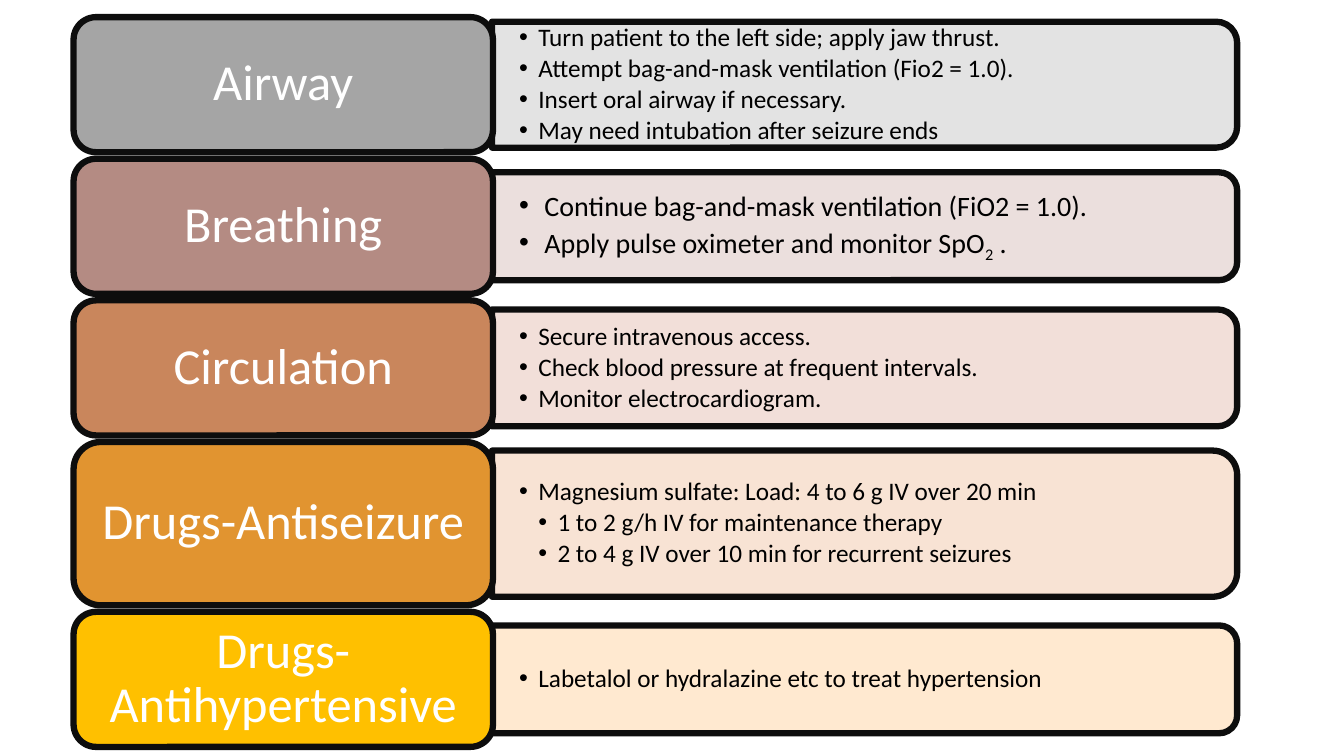
"""Build a slide of emergency care steps for seizures, one labelled row per step."""
from pptx import Presentation
from pptx.dml.color import RGBColor
from pptx.enum.shapes import MSO_SHAPE
from pptx.enum.text import MSO_ANCHOR, PP_ALIGN
from pptx.oxml.ns import qn
from pptx.util import Inches, Pt
from lxml.etree import SubElement

STEPS = [
    dict(label="Airway", fill="A5A5A5", tint="E1E1E1", height=1.34, panel=1.25,
         size=18, indent=0.19,
         lines=[(1, ["Turn patient to the left side; apply jaw thrust."]),
                (1, ["Attempt bag-and-mask ventilation (Fio2 = 1.0)."]),
                (1, ["Insert oral airway if necessary."]),
                (1, ["May need intubation after seizure ends"])]),
    dict(label="Breathing", fill="B48B83", tint="E9DCDA", height=1.34, panel=1.07,
         size=20, indent=0.25,
         lines=[(1, ["Continue bag-and-mask ventilation (FiO2 = 1.0)."]),
                (1, ["Apply pulse oximeter and monitor SpO", ("2", -25000), " ."])]),
    dict(label="Circulation", fill="C9865C", tint="F1DCD5", height=1.34, panel=1.16,
         size=18, indent=0.19,
         lines=[(1, ["Secure intravenous access."]),
                (1, ["Check blood pressure at frequent intervals."]),
                (1, ["Monitor electrocardiogram."])]),
    dict(label="Drugs-Antiseizure", fill="E19430", tint="F8E0D0", height=1.62, panel=1.45,
         size=18, indent=0.19,
         lines=[(1, ["Magnesium sulfate: Load: 4 to 6 g IV over 20 min"]),
                (2, ["1 to 2 g/h IV for maintenance therapy"]),
                (2, ["2 to 4 g IV over 10 min for recurrent seizures"])]),
    dict(label="Drugs- Antihypertensive", fill="FFC000", tint="FFE7CB", height=1.34, panel=1.07,
         size=18, indent=0.19,
         lines=[(1, ["Labetalol or hydralazine etc to treat hypertension"])]),
]

THEME = dict(font="Calibri", outline="0D0D0D", outline_pt=4.5, label_text="FFFFFF",
             label_pt=36, body_text="000000", tint_alpha=90000)
LEFT, TOP, GAP = 0.73, 0.17, 0.065
LABEL_W, PANEL_W = 4.16, 7.39
PANEL_LEFT = 4.88


def add_block(slide, kind, left, top, width, height, fill):
    s = slide.shapes.add_shape(kind, Inches(left), Inches(top), Inches(width), Inches(height))
    s.shadow.inherit = False
    s.fill.solid()
    s.fill.fore_color.rgb = RGBColor.from_string(fill)
    s.line.color.rgb = RGBColor.from_string(THEME["outline"])
    s.line.width = Pt(THEME["outline_pt"])
    return s


def set_frame(tf, side, edge):
    tf.word_wrap = True
    tf.vertical_anchor = MSO_ANCHOR.MIDDLE
    tf.margin_left = tf.margin_right = Inches(side)
    tf.margin_top = tf.margin_bottom = Inches(edge)


def add_run(p, text, size, color):
    r = p.add_run()
    r.text = text
    r.font.name = THEME["font"]
    r.font.size = Pt(size)
    r.font.color.rgb = RGBColor.from_string(color)
    return r


def add_panel(slide, step, middle):
    height = step["panel"]
    s = add_block(slide, MSO_SHAPE.ROUND_2_SAME_RECTANGLE,
                  PANEL_LEFT + (PANEL_W - height) / 2, middle - PANEL_W / 2,
                  height, PANEL_W, step["tint"])
    s.rotation = 90
    color = s._element.spPr.find(qn("a:solidFill"))[0]
    SubElement(color, qn("a:alpha")).set("val", str(THEME["tint_alpha"]))


def add_details(slide, step, middle):
    height = step["panel"] - 0.12
    box = slide.shapes.add_textbox(Inches(PANEL_LEFT), Inches(middle - height / 2),
                                   Inches(PANEL_W - 0.06), Inches(height))
    tf = box.text_frame
    set_frame(tf, 0.27, 0.14)
    for i, (level, parts) in enumerate(step["lines"]):
        p = tf.add_paragraph() if i else tf.paragraphs[0]
        pPr = p._p.get_or_add_pPr()
        pPr.set("marL", str(Inches(step["indent"] * level)))
        pPr.set("indent", str(-Inches(step["indent"])))
        SubElement(pPr, qn("a:buFont")).set("typeface", "Arial")
        SubElement(pPr, qn("a:buChar")).set("char", "•")
        p.level = level
        p.line_spacing = 0.9
        p.space_after = Pt(step["size"] * 0.15)
        for part in parts:
            text, baseline = (part, 0) if isinstance(part, str) else part
            r = add_run(p, text, step["size"], THEME["body_text"])
            if baseline:
                r.font._element.set("baseline", str(baseline))


def add_label(slide, step, top):
    s = add_block(slide, MSO_SHAPE.ROUNDED_RECTANGLE, LEFT, top, LABEL_W,
                  step["height"], step["fill"])
    set_frame(s.text_frame, 0.15, 0.07)
    p = s.text_frame.paragraphs[0]
    p.alignment = PP_ALIGN.CENTER
    p.line_spacing = 0.9
    add_run(p, step["label"], THEME["label_pt"], THEME["label_text"])


def main():
    prs = Presentation()
    prs.slide_width, prs.slide_height = Inches(13.33), Inches(7.5)
    slide = prs.slides.add_slide(prs.slide_layouts[6])
    top = TOP
    for step in STEPS:
        middle = top + step["height"] / 2
        add_panel(slide, step, middle)
        add_details(slide, step, middle)
        add_label(slide, step, top)
        top += step["height"] + GAP
    prs.save("out.pptx")


if __name__ == "__main__":
    main()
